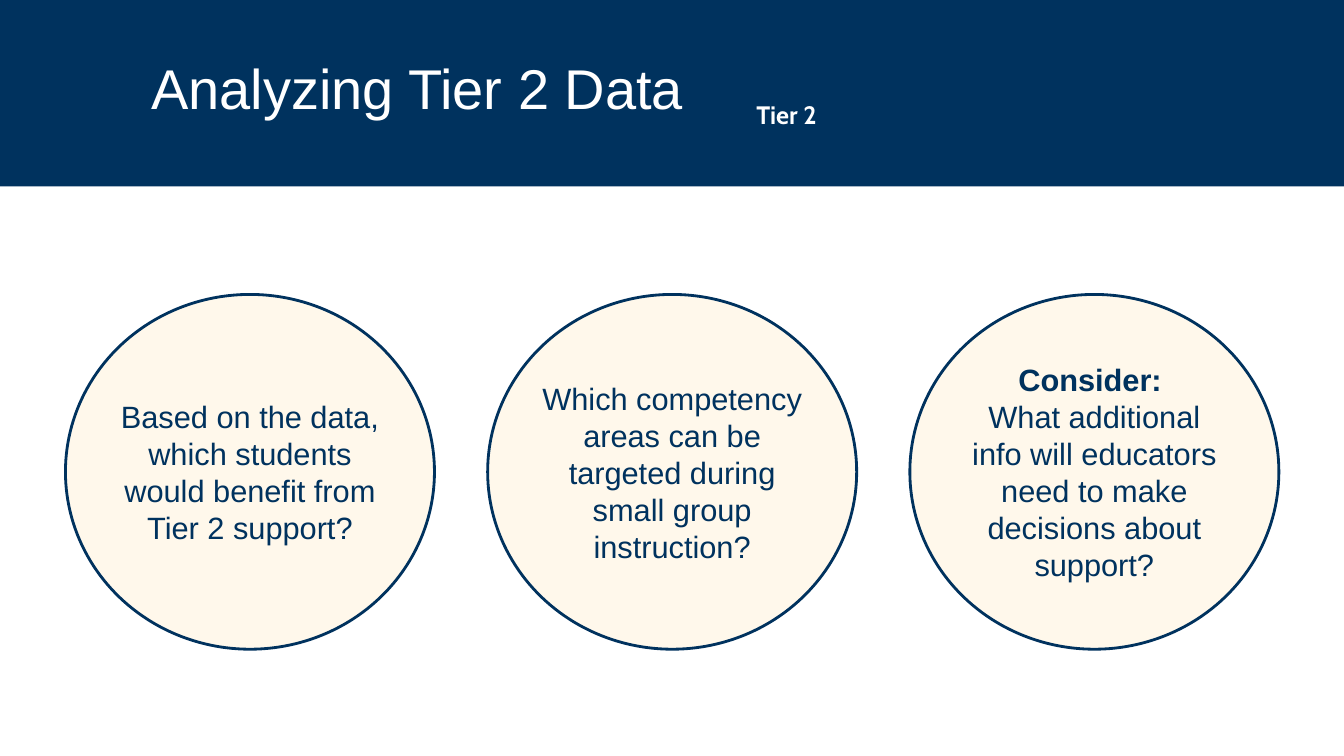
from pptx import Presentation
from pptx.dml.color import RGBColor as RGB
from pptx.enum.shapes import MSO_SHAPE as Kind
from pptx.enum.text import MSO_ANCHOR as Anchor, PP_ALIGN as Align
from pptx.util import Cm, Pt

NAVY, CREAM, WHITE = "00325E", "FFF8EB", "FFFFFF"
LEFT, STEP = 1.65, 10.64

# Each circle holds lines of (text, bold)
ASKS = [
    [("Based on the data, which students would benefit from "
      "Tier 2 support?", False)],
    [("Which competency areas can be targeted during small group "
      "instruction?", False)],
    [("Consider: ", True),
     ("What additional info will educators need to make decisions "
      "about support?", False)],
]


def paint(item, color):
    """Give a fill or a line one solid colour."""
    item.solid()
    item.fore_color.rgb = RGB.from_string(color)


def add_run(para, text, size, color, face="Arial", bold=False):
    run = para.add_run()
    run.text = text
    font = run.font
    font.name, font.size, font.bold = face, Pt(size), bold
    font.color.rgb = RGB.from_string(color)


def add_form(slide, kind, box, fill):
    form = slide.shapes.add_shape(kind, *map(Cm, box))
    form.shadow.inherit = False
    paint(form.fill, fill)
    form.line.fill.background()
    return form


def add_label(slide, box, text, size, face, bold, align):
    frame = slide.shapes.add_textbox(*map(Cm, box)).text_frame
    frame.word_wrap = True
    para = frame.paragraphs[0]
    para.alignment = align
    add_run(para, text, size, WHITE, face, bold)
    return para


def add_circle(slide, left, lines):
    form = add_form(slide, Kind.OVAL, (left, 7.42, 9.3, 8.94), CREAM)
    paint(form.line.fill, NAVY)
    form.line.width = Pt(2)
    frame = form.text_frame
    frame.word_wrap = True
    frame.vertical_anchor = Anchor.MIDDLE
    frame.margin_left = frame.margin_right = 0
    frame.margin_top = frame.margin_bottom = 0
    for i, (text, bold) in enumerate(lines):
        para = frame.add_paragraph() if i else frame.paragraphs[0]
        para.alignment = Align.CENTER
        add_run(para, text, 22, NAVY, bold=bold)


def main():
    deck = Presentation()
    deck.slide_width, deck.slide_height = Cm(33.87), Cm(19.05)
    slide = deck.slides.add_slide(deck.slide_layouts[6])
    paint(slide.background.fill, WHITE)

    add_form(slide, Kind.RECTANGLE, (0, 0, 33.87, 4.7), NAVY)
    title = add_label(slide, (3.56, 1.42, 28.17, 2.74),
                      "Analyzing Tier 2 Data", 40, "Arial", False, Align.LEFT)
    title.line_spacing = 0.9
    for i, lines in enumerate(ASKS):
        add_circle(slide, LEFT + i * STEP, lines)
    add_label(slide, (12.7, 2.39, 14.25, 0.84),
              "Tier 2", 18, "Cabin", True, Align.CENTER)
    deck.save("out.pptx")


if __name__ == "__main__":
    main()
